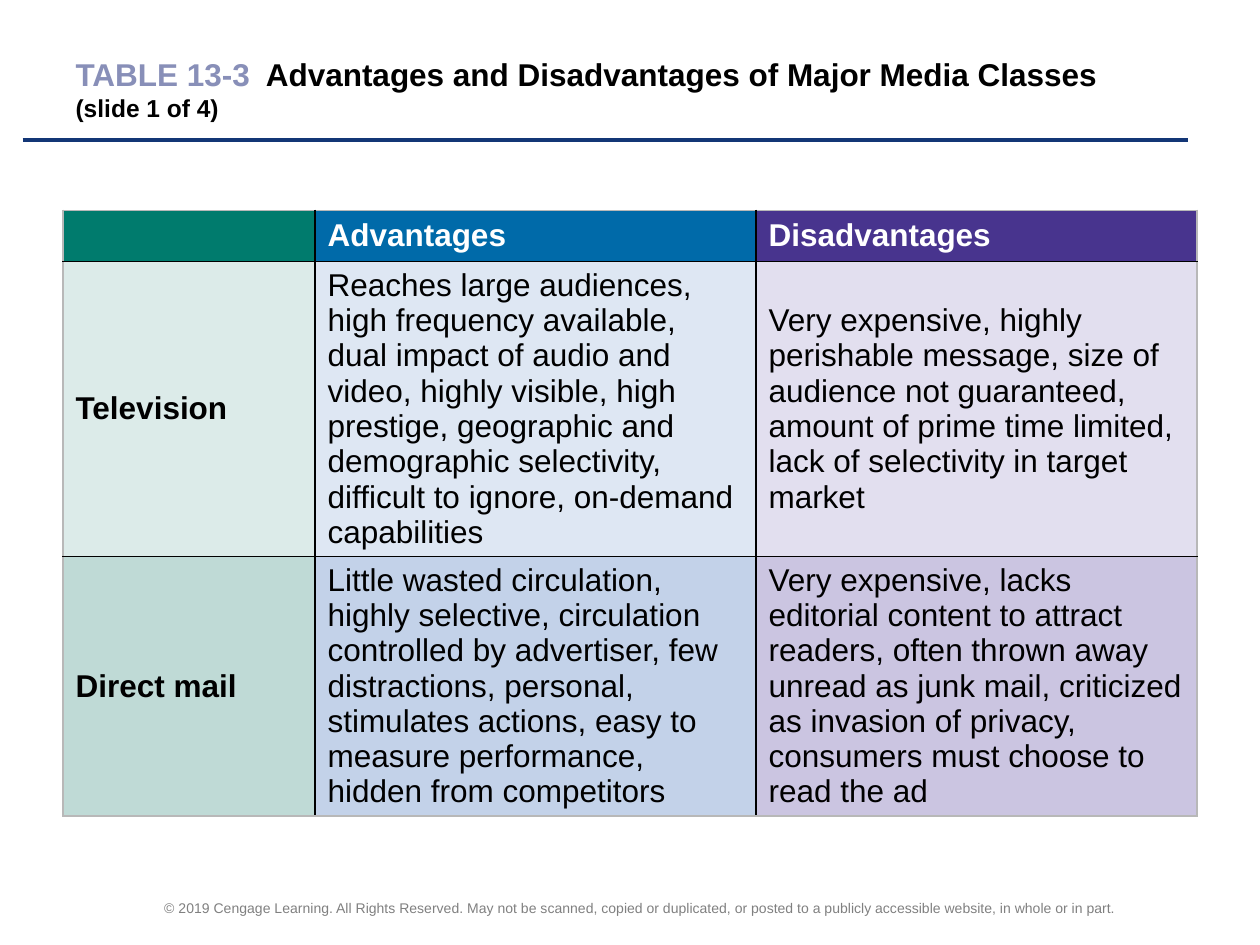
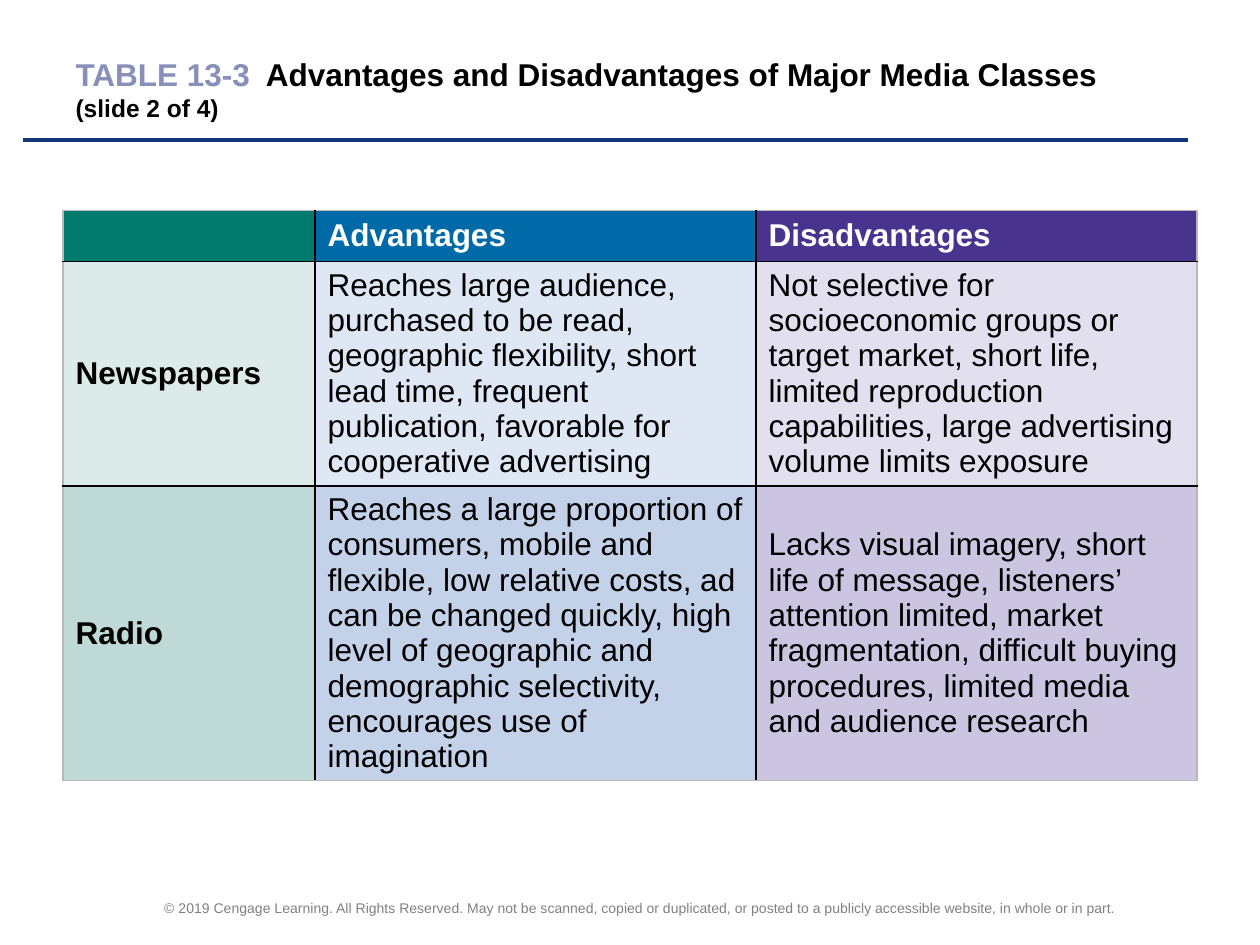
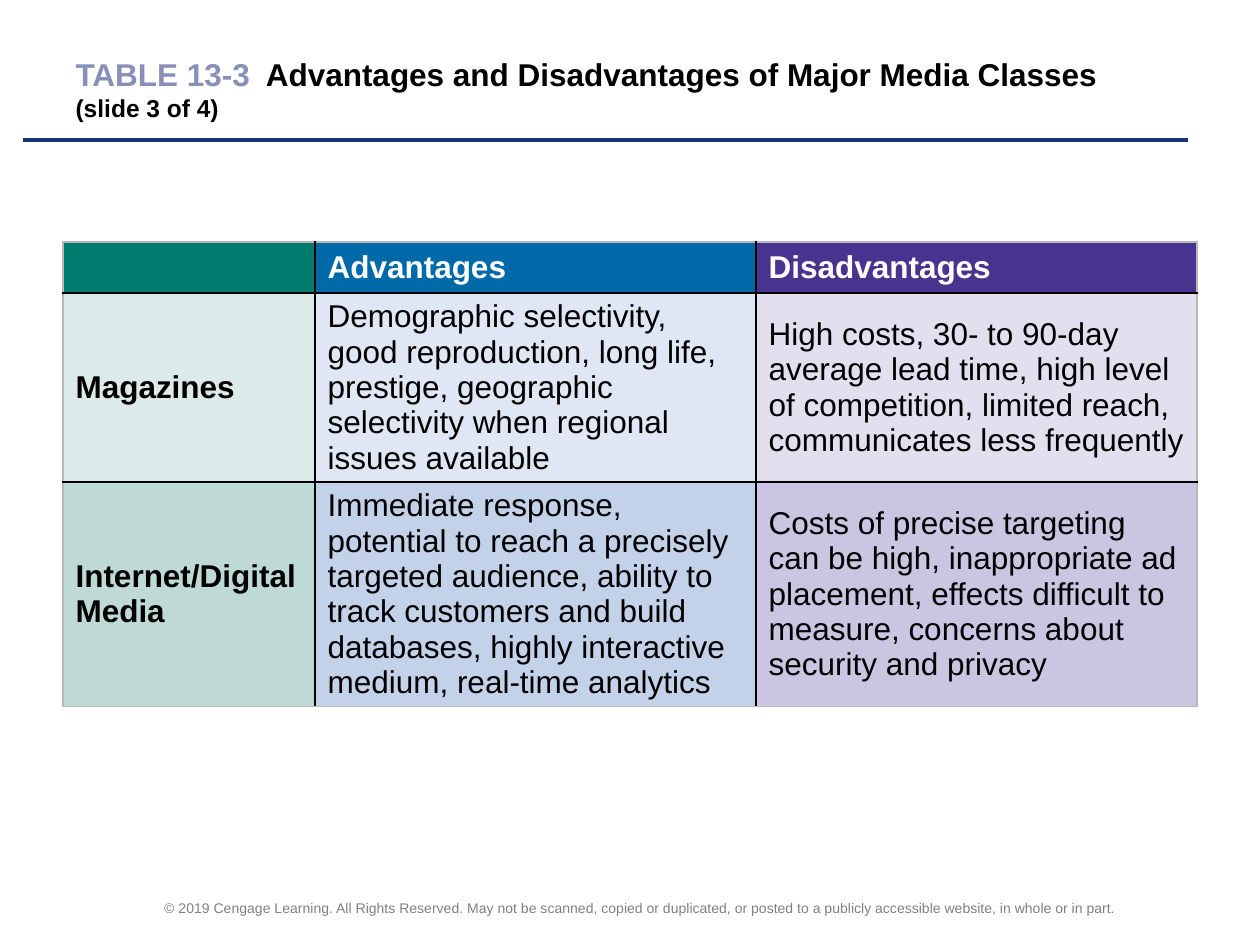
from lxml import etree
from pptx import Presentation
from pptx import util as u
from pptx.dml.color import RGBColor
from pptx.enum import shapes, text
from pptx.oxml.ns import qn

FONT = "Arial"
COLORS = {
    "label": "888FB8", "black": "000000", "white": "FFFFFF",
    "rule": "133676", "footer": "808080", "frame": "B8B8B8",
}
HEADER_FILLS = ("007B6D", "006AA9", "48348E")
ROW_FILLS = (("DCEBE9", "DEE7F3", "E2DFEF"), ("BFDAD6", "C3D2E9", "CBC5E1"))

TABLE_LABEL = "TABLE 13-3"
TABLE_TITLE = "Advantages and Disadvantages of Major Media Classes"
TOTAL_PARTS = 4
COPYRIGHT = ("© 2019 Cengage Learning. All Rights Reserved. May not be scanned, copied or "
             "duplicated, or posted to a publicly accessible website, in whole or in part.")
HEADINGS = ("", "Advantages", "Disadvantages")

# Each part: top of the table, then (medium, advantages, disadvantages, lines of text)
PARTS = [
    (1.67, [
        ("Television",
         "Reaches large audiences, high frequency available, dual impact of audio and video, "
         "highly visible, high prestige, geographic and demographic selectivity, difficult to "
         "ignore, on-demand capabilities",
         "Very expensive, highly perishable message, size of audience not guaranteed, amount of "
         "prime time limited, lack of selectivity in target market", 8),
        ("Direct mail",
         "Little wasted circulation, highly selective, circulation controlled by advertiser, few "
         "distractions, personal, stimulates actions, easy to measure performance, hidden from "
         "competitors",
         "Very expensive, lacks editorial content to attract readers, often thrown away unread as "
         "junk mail, criticized as invasion of privacy, consumers must choose to read the ad", 7),
    ]),
    (1.67, [
        ("Newspapers",
         "Reaches large audience, purchased to be read, geographic flexibility, short lead time, "
         "frequent publication, favorable for cooperative advertising",
         "Not selective for socioeconomic groups or target market, short life, limited "
         "reproduction capabilities, large advertising volume limits exposure", 6),
        ("Radio",
         "Reaches a large proportion of consumers, mobile and flexible, low relative costs, ad "
         "can be changed quickly, high level of geographic and demographic selectivity, "
         "encourages use of imagination",
         "Lacks visual imagery, short life of message, listeners’ attention limited, market "
         "fragmentation, difficult buying procedures, limited media and audience research", 8),
    ]),
    (1.92, [
        ("Magazines",
         "Demographic selectivity, good reproduction, long life, prestige, geographic selectivity "
         "when regional issues available",
         "High costs, 30- to 90-day average lead time, high level of competition, limited reach, "
         "communicates less frequently", 5),
        ("Internet/Digital Media",
         "Immediate response, potential to reach a precisely targeted audience, ability to track "
         "customers and build databases, highly interactive medium, real-time analytics",
         "Costs of precise targeting can be high, inappropriate ad placement, effects difficult "
         "to measure, concerns about security and privacy", 6),
    ]),
]

COLUMN_WIDTHS = (2, 3.5, 3.5)
LINE_HEIGHT, CELL_MARGINS = 0.28, 0.1


def rgb(name):
    return RGBColor.from_string(COLORS[name])


def style_run(run, size, color, bold=False):
    run.font.name = FONT
    run.font.size = u.Pt(size)
    run.font.bold = bold
    run.font.color.rgb = rgb(color)


def add_layout_furniture(slide):
    """Draw the footer and the title rule, then hand them to the slide's layout."""
    footer = slide.shapes.add_textbox(u.Inches(0.75), u.Inches(7.08),
                                      u.Inches(8.67), u.Inches(0.25))
    frame = footer.text_frame
    frame.word_wrap = True
    frame.vertical_anchor = text.MSO_ANCHOR.MIDDLE
    frame.text = COPYRIGHT
    frame.paragraphs[0].alignment = text.PP_ALIGN.CENTER
    style_run(frame.paragraphs[0].runs[0], 8, "footer")

    rule = slide.shapes.add_connector(shapes.MSO_CONNECTOR.STRAIGHT, u.Inches(0.18),
                                      u.Inches(1.11), u.Inches(9.43), u.Inches(1.11))
    rule.line.color.rgb = rgb("rule")
    rule.line.width = u.Pt(2.25)
    etree.SubElement(rule.element.spPr, qn("a:effectLst"))

    for shape_id, shape in enumerate((footer, rule), 20):
        shape.element.xpath(".//p:cNvPr")[0].set("id", str(shape_id))
        slide.slide_layout.shapes.element.append(shape.element)


def set_title(slide, number):
    title = slide.shapes.title
    title.left, title.top = u.Inches(0.5), u.Inches(0.33)
    title.width, title.height = u.Inches(9), u.Inches(0.75)
    frame = title.text_frame
    frame.vertical_anchor = text.MSO_ANCHOR.MIDDLE
    frame.auto_size = text.MSO_AUTO_SIZE.NONE
    heading = frame.paragraphs[0]
    heading.alignment = text.PP_ALIGN.LEFT
    tabs = etree.SubElement(heading._p.get_or_add_pPr(), qn("a:tabLst"))
    etree.SubElement(tabs, qn("a:tab"), pos=str(u.Inches(1.51)), algn="l")
    for words, size, color in (
            (TABLE_LABEL, 18, "label"),
            (f"\t{TABLE_TITLE} \t", 18, "black"),
            (f"(slide {number} of {TOTAL_PARTS})", 14, "black")):
        run = heading.add_run()
        run.text = words
        style_run(run, size, color, bold=True)


def set_borders(cell, outer_sides):
    """Frame colour on the table's outer sides, black between cells."""
    for side in "LRTB":
        line = etree.SubElement(cell._tc.get_or_add_tcPr(), qn(f"a:ln{side}"),
                                w=str(u.Pt(1)))
        fill = etree.SubElement(line, qn("a:solidFill"))
        color = COLORS["frame" if side in outer_sides else "black"]
        etree.SubElement(fill, qn("a:srgbClr"), val=color)


def add_media_table(slide, top, media):
    rows = [HEADINGS] + [medium[:3] for medium in media]
    heights = [LINE_HEIGHT * lines + CELL_MARGINS
               for lines in [1] + [medium[3] for medium in media]]
    table = slide.shapes.add_table(
        len(rows), len(HEADINGS), u.Inches(0.5), u.Inches(top),
        u.Inches(sum(COLUMN_WIDTHS)), u.Inches(sum(heights))).table
    table.first_row = table.horz_banding = False
    for column, width in zip(table.columns, COLUMN_WIDTHS):
        column.width = u.Inches(width)
    for row, height in zip(table.rows, heights):
        row.height = u.Inches(height)

    last_row, last_column = len(rows) - 1, len(HEADINGS) - 1
    for r, (row, fills) in enumerate(zip(rows, (HEADER_FILLS, *ROW_FILLS))):
        for c, (words, fill) in enumerate(zip(row, fills)):
            cell = table.cell(r, c)
            outer = (("L" if c == 0 else "") + ("R" if c == last_column else "")
                     + ("T" if r == 0 else "") + ("B" if r == last_row else ""))
            set_borders(cell, outer)
            cell.fill.solid()
            cell.fill.fore_color.rgb = RGBColor.from_string(fill)
            cell.vertical_anchor = text.MSO_ANCHOR.MIDDLE
            if words:
                cell.text_frame.text = words
                style_run(cell.text_frame.paragraphs[0].runs[0], 18,
                          "white" if r == 0 else "black", bold=r == 0 or c == 0)


def main():
    deck = Presentation()
    deck.slide_width, deck.slide_height = u.Inches(10), u.Inches(7.5)
    title_only = deck.slide_layouts[5]
    for number, (top, media) in enumerate(PARTS, 1):
        slide = deck.slides.add_slide(title_only)
        if number == 1:
            add_layout_furniture(slide)
        set_title(slide, number)
        add_media_table(slide, top, media)
    deck.save("out.pptx")


if __name__ == "__main__":
    main()
